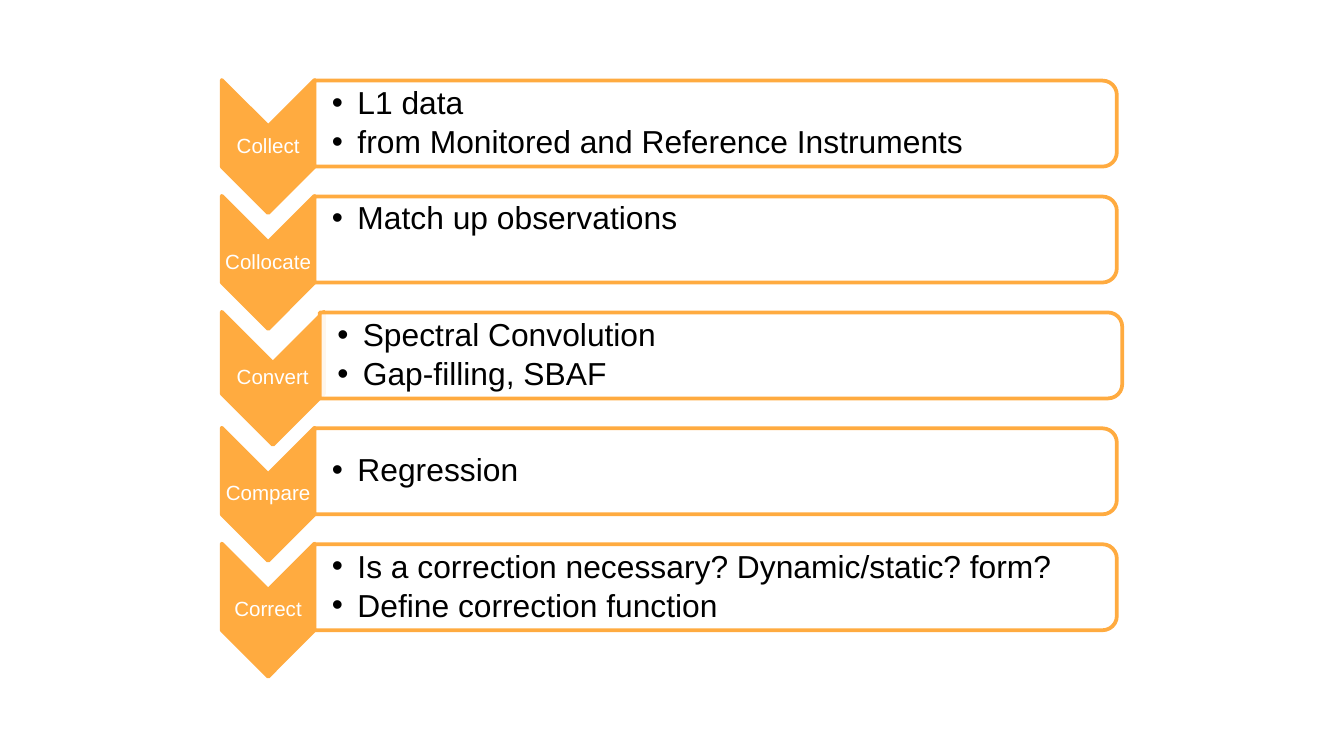
from dataclasses import dataclass

from lxml.etree import SubElement
from pptx import Presentation
from pptx.dml.color import RGBColor
from pptx.enum.shapes import MSO_SHAPE
from pptx.enum.text import MSO_ANCHOR, PP_ALIGN
from pptx.oxml.ns import qn
from pptx.util import Inches, Pt


@dataclass(frozen=True)
class Theme:
    accent: RGBColor = RGBColor.from_string("FFAB40")
    light: RGBColor = RGBColor.from_string("FFFFFF")
    dark: RGBColor = RGBColor.from_string("000000")
    font: str = "Arial"
    label_size: int = 11
    list_size: int = 17
    line_width: int = 2


theme = Theme()

# Step name, chevron width, panel left, list anchor, list items
steps = [
    ("Collect", 0.69, 2.34, MSO_ANCHOR.MIDDLE,
     ["L1 data", "from Monitored and Reference Instruments"]),
    ("Collocate", 0.69, 2.34, MSO_ANCHOR.TOP, ["Match up observations"]),
    ("Convert", 0.76, 2.38, MSO_ANCHOR.MIDDLE,
     ["Spectral Convolution", "Gap-filling, SBAF"]),
    ("Compare", 0.69, 2.34, MSO_ANCHOR.MIDDLE, ["Regression"]),
    ("Correct", 0.69, 2.34, MSO_ANCHOR.MIDDLE,
     ["Is a correction necessary? Dynamic/static? form?",
      "Define correction function"]),
]
LEFT, FIRST_CENTER, LAST_CENTER = 1.65, 1.09, 4.54
PITCH = (LAST_CENTER - FIRST_CENTER) / (len(steps) - 1)
CHEVRON_H, LABEL_H = 0.99, 0.3
PANEL_W, PANEL_H, PANEL_RISE = 5.97, 0.64, 0.17
LIST_W, LIST_H = 5.94, 0.58

# Widescreen slide, 16 to 9
prs = Presentation()
prs.slide_width = Inches(10)
prs.slide_height = Inches(10 * 9 / 16)
s = prs.slides.add_slide(prs.slide_layouts[6])
diagram = s.shapes.add_group_shape()


def add_turned(kind, cx, cy, length, thickness, fill):
    """Add a shape turned a quarter clockwise about its centre."""
    sp = diagram.shapes.add_shape(
        kind, Inches(cx - length / 2), Inches(cy - thickness / 2),
        Inches(length), Inches(thickness))
    sp.rotation = 90
    sp.shadow.inherit = False
    sp.fill.solid()
    sp.fill.fore_color.rgb = fill
    sp.line.color.rgb = theme.accent
    sp.line.width = Pt(theme.line_width)
    return sp


def add_text(x, cy, w, h, items, size, color, anchor, inset, space):
    """Add a text box centred on cy, with one paragraph per item."""
    sp = diagram.shapes.add_textbox(
        Inches(x), Inches(cy - h / 2), Inches(w), Inches(h))
    tf = sp.text_frame
    tf.word_wrap = True
    tf.vertical_anchor = anchor
    tf.margin_left = Inches(inset)
    tf.margin_right = tf.margin_top = tf.margin_bottom = Inches(0.01)
    for i, item in enumerate(items):
        p = tf.add_paragraph() if i else tf.paragraphs[0]
        p.line_spacing = 0.9
        p.space_after = Pt(size * space)
        r = p.add_run()
        r.text = item
        r.font.name = theme.font
        r.font.size = Pt(size)
        r.font.color.rgb = color
    return tf


for i, (name, chevron_w, panel_left, anchor, items) in enumerate(steps):
    cy = FIRST_CENTER + i * PITCH
    panel_cy = cy - PANEL_RISE

    # Chevron and its label
    add_turned(MSO_SHAPE.CHEVRON, LEFT + chevron_w / 2, cy,
               CHEVRON_H, chevron_w, theme.accent)
    tf = add_text(LEFT, cy, chevron_w, LABEL_H, [name], theme.label_size,
                  theme.light, MSO_ANCHOR.MIDDLE, 0.01, 0.35)
    tf.paragraphs[0].alignment = PP_ALIGN.CENTER

    # Translucent panel, rounded on the right
    panel = add_turned(MSO_SHAPE.ROUND_2_SAME_RECTANGLE,
                       panel_left + PANEL_W / 2, panel_cy,
                       PANEL_H, PANEL_W, theme.light)
    fill_color = panel.fill._xPr.find(qn("a:solidFill"))[0]
    SubElement(fill_color, qn("a:alpha"), val="90000")

    # Bulleted list
    tf = add_text(panel_left, panel_cy, LIST_W, LIST_H, items,
                  theme.list_size, theme.dark, anchor, 0.13, 0.15)
    for p in tf.paragraphs:
        p.level = 1
        pPr = p._p.get_or_add_pPr()
        pPr.set("marL", str(Inches(0.19)))
        pPr.set("indent", str(Inches(-0.19)))
        bullet_color = SubElement(pPr, qn("a:buClr"))
        SubElement(bullet_color, qn("a:srgbClr"), val=str(theme.dark))
        SubElement(pPr, qn("a:buFont"), typeface=theme.font)
        SubElement(pPr, qn("a:buChar"), char="•")

prs.save("out.pptx")
